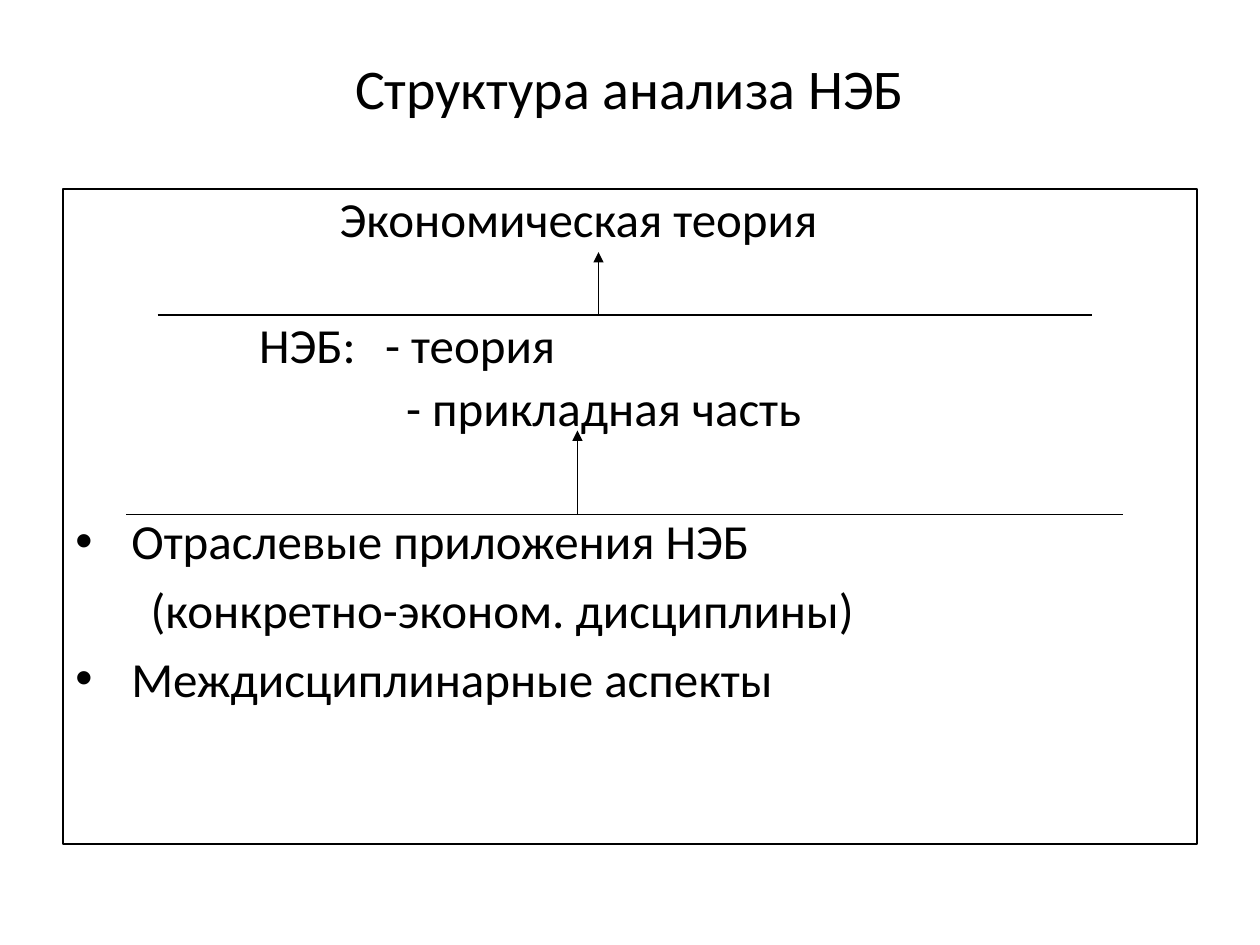
from dataclasses import dataclass

from pptx import Presentation
from pptx.dml.color import RGBColor
from pptx.enum import shapes, text
from pptx.oxml.ns import qn
from pptx.util import Pt
from lxml import etree


@dataclass(frozen=True)
class Theme:
    ink: RGBColor = RGBColor(0, 0, 0)
    font: str = "Calibri"
    title_size: float = 32
    body_size: float = 28
    line_width: float = 0.75


THEME = Theme()
GAP = 5.6              # space before a paragraph
SKIPPED = GAP + 36.4   # the same, with one line left free above
BULLET_INDENT = 32
TAB_STOP = 232

# text, left indent, space before, line spacing, bulleted
LEVELS = [
    ("Экономическая теория", 151, 0, 0.9, False),
    ("НЭБ:\t- теория", 105, SKIPPED, 0.9, False),
    ("- прикладная часть", 189, GAP, 0.9, False),
    ("Отраслевые приложения НЭБ", BULLET_INDENT, SKIPPED, 1.0, True),
    ("(конкретно-эконом. дисциплины)", 43, GAP, 1.0, False),
    ("Междисциплинарные аспекты", BULLET_INDENT, GAP, 1.0, True),
]

# divider left, right and height, then arrow position and length
DIVIDERS = [
    (54, 588, 72, 306, 36),
    (36, 606, 186, 294, 48),
]


def assign(target, values):
    for name, value in values.items():
        setattr(target, name, value)


def style_font(font, size):
    assign(font, {"name": THEME.font, "size": Pt(size)})
    font.color.rgb = THEME.ink


def style_line(line):
    line.color.rgb = THEME.ink
    line.width = Pt(THEME.line_width)


def place_title(slide, left, top, width, height):
    title = slide.shapes.title
    assign(title, {"left": Pt(left), "top": Pt(top),
                   "width": Pt(width), "height": Pt(height)})
    frame = title.text_frame
    frame.text = "Структура анализа НЭБ"
    frame.vertical_anchor = text.MSO_ANCHOR.MIDDLE
    heading = frame.paragraphs[0]
    heading.alignment = text.PP_ALIGN.CENTER
    style_font(heading.runs[0].font, THEME.title_size)


def indent(paragraph, left, bulleted):
    """Set the left indent, the tab stop and the bullet."""
    props = paragraph._p.get_or_add_pPr()
    props.set("marL", str(Pt(left)))
    props.set("indent", str(-Pt(left) if bulleted else 0))
    if bulleted:
        etree.SubElement(props, qn("a:buFont"), typeface="Arial")
        etree.SubElement(props, qn("a:buChar"), char="•")
    else:
        etree.SubElement(props, qn("a:buNone"))
    if "\t" in paragraph.text:
        tabs = etree.SubElement(props, qn("a:tabLst"))
        etree.SubElement(tabs, qn("a:tab"), pos=str(Pt(TAB_STOP)), algn="l")


def draw_line(slide, x1, y1, x2, y2, arrow=False):
    connector = slide.shapes.add_connector(
        shapes.MSO_CONNECTOR.STRAIGHT, Pt(x1), Pt(y1), Pt(x2), Pt(y2))
    style_line(connector.line)
    if arrow:
        etree.SubElement(connector.line._get_or_add_ln(), qn("a:tailEnd"),
                         type="triangle")
    etree.SubElement(connector._element.spPr, qn("a:effectLst"))


def place_structure(slide, left, top, width, height):
    """Framed levels of analysis, parted by dividers with upward arrows."""
    panel = slide.shapes.add_shape(shapes.MSO_SHAPE.RECTANGLE,
                                   Pt(left), Pt(top), Pt(width), Pt(height))
    panel.shadow.inherit = False
    panel.fill.background()
    style_line(panel.line)

    frame = panel.text_frame
    assign(frame, {"word_wrap": True, "vertical_anchor": text.MSO_ANCHOR.TOP})
    for index, (wording, margin, before, spacing, bulleted) in enumerate(LEVELS):
        level = frame.add_paragraph() if index else frame.paragraphs[0]
        level.text = wording
        assign(level, {"alignment": text.PP_ALIGN.LEFT,
                       "space_before": Pt(before), "line_spacing": spacing})
        indent(level, margin, bulleted)
        style_font(level.runs[0].font, THEME.body_size)

    for start, end, depth, arrow_x, rise in DIVIDERS:
        y = top + depth
        draw_line(slide, left + start, y, left + end, y)
        draw_line(slide, left + arrow_x, y, left + arrow_x, y - rise, arrow=True)


def main():
    deck = Presentation()
    assign(deck, {"slide_width": Pt(720), "slide_height": Pt(540)})
    slide = deck.slides.add_slide(deck.slide_layouts.get_by_name("Title Only"))
    place_title(slide, 36, 21.6, 648, 56.2)
    place_structure(slide, 36, 108, 648, 374.4)
    deck.save("out.pptx")


if __name__ == "__main__":
    main()
